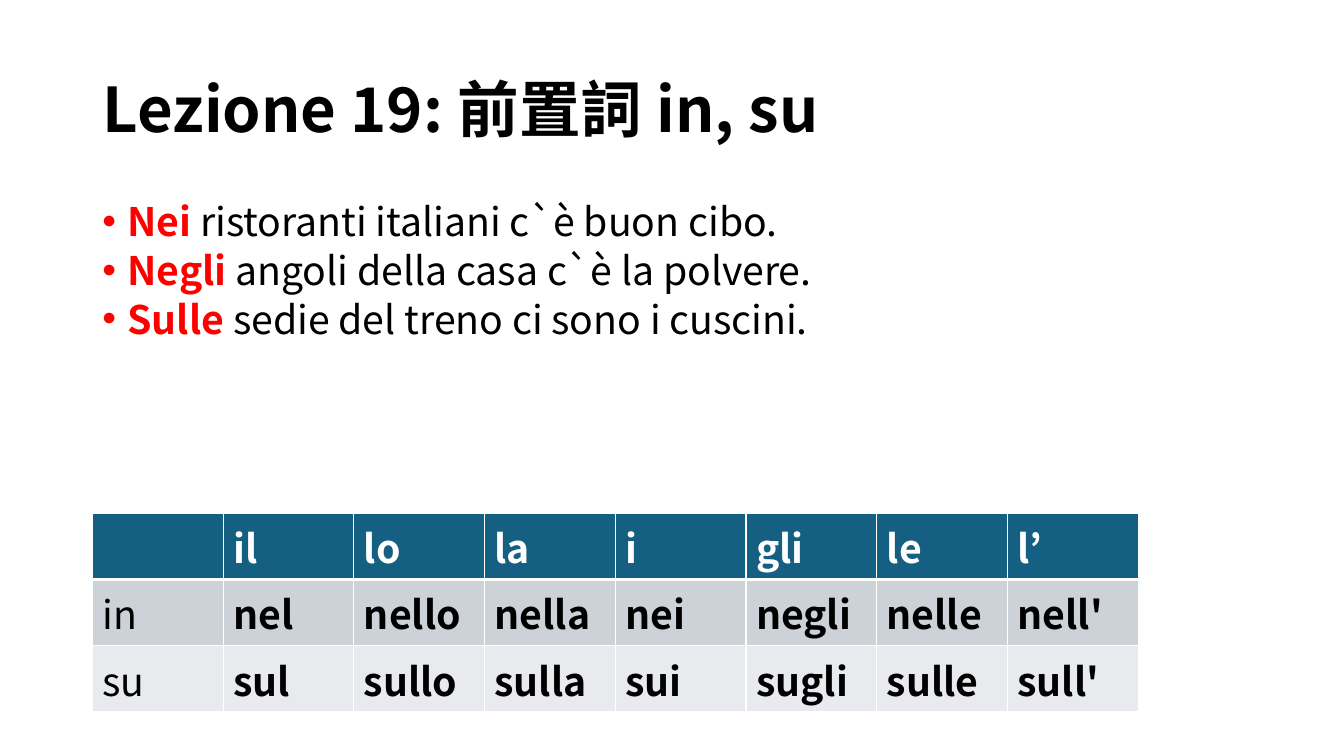
import lxml.etree
import pptx
import pptx.dml.color
import pptx.enum.text
import pptx.oxml.ns
import pptx.util

EMU_PER_PX = 9525
FONT = "Noto Sans CJK JP"
COLORS = {
    "ink": "000000",
    "accent": "FF0000",
    "white": "FFFFFF",
    "header": "156082",
    "in_row": "CCD2D8",
    "su_row": "E8EAED",
}
TITLE = "Lezione 19: 前置詞 in, su"
EXAMPLES = [
    ("Nei ", "ristoranti italiani c`è buon cibo."),
    ("Negli ", "angoli della casa c`è la polvere."),
    ("Sulle ", "sedie del treno ci sono i cuscini."),
]
CONTRACTIONS = [
    ["", "il", "lo", "la", "i", "gli", "le", "l’"],
    ["in", "nel", "nello", "nella", "nei", "negli", "nelle", "nell'"],
    ["su", "sul", "sullo", "sulla", "sui", "sugli", "sulle", "sull'"],
]


def px(length):
    return pptx.util.Emu(length * EMU_PER_PX)


def rgb(name):
    return pptx.dml.color.RGBColor.from_string(COLORS[name])


def add_xml(parent, tag, **attributes):
    return lxml.etree.SubElement(parent, pptx.oxml.ns.qn(tag), attributes)


def format_paragraph(paragraph, size, color=None, bold=None):
    """Set the font for Latin and East Asian letters alike."""
    font = paragraph.font
    font.size = pptx.util.Pt(size)
    font.name = FONT
    font.bold = bold
    if color:
        font.color.rgb = rgb(color)
    defaults = paragraph._p.pPr.find(pptx.oxml.ns.qn("a:defRPr"))
    add_xml(defaults, "a:ea", typeface=FONT)


def add_title(slide, left, top, width, height):
    title = slide.shapes.title
    title.left, title.top, title.width, title.height = map(px, (left, top, width, height))
    frame = title.text_frame
    frame.text = TITLE
    frame.word_wrap = True
    frame.vertical_anchor = pptx.enum.text.MSO_ANCHOR.MIDDLE
    heading = frame.paragraphs[0]
    heading.alignment = pptx.enum.text.PP_ALIGN.LEFT
    heading.line_spacing = 0.9
    format_paragraph(heading, 44, "ink", True)


def add_bullet(paragraph, indent):
    properties = paragraph._p.get_or_add_pPr()
    properties.set("marL", str(px(indent)))
    properties.set("indent", str(px(-indent)))
    bullet_color = add_xml(properties, "a:buClr")
    add_xml(bullet_color, "a:srgbClr", val=COLORS["accent"])
    add_xml(properties, "a:buFont", typeface="Arial")
    add_xml(properties, "a:buChar", char="•")


def add_examples(slide, left, top, width, height):
    frame = slide.shapes.add_textbox(*map(px, (left, top, width, height))).text_frame
    frame.word_wrap = True
    for index, (preposition, rest) in enumerate(EXAMPLES):
        sentence = frame.add_paragraph() if index else frame.paragraphs[0]
        add_bullet(sentence, 24)
        sentence.line_spacing = 0.8
        sentence.space_before = pptx.util.Pt(8 if index else 0)
        format_paragraph(sentence, 28)
        for words, color, bold in ((preposition, "accent", True), (rest, "ink", False)):
            run = sentence.add_run()
            run.text = words
            run.font.bold = bold
            run.font.color.rgb = rgb(color)


def add_borders(cell, top, bottom):
    """Draw white cell edges; top and bottom are widths in points."""
    properties = cell._tc.get_or_add_tcPr()
    for side, width in (("L", 1), ("R", 1), ("T", top), ("B", bottom)):
        edge = add_xml(properties, f"a:ln{side}", w=str(pptx.util.Pt(width)))
        add_xml(add_xml(edge, "a:solidFill"), "a:srgbClr", val=COLORS["white"])


def add_contractions(slide, left, top, width, height):
    row_count, column_count = len(CONTRACTIONS), len(CONTRACTIONS[0])
    table = slide.shapes.add_table(
        row_count, column_count, *map(px, (left, top, width, height))
    ).table
    for row, (words, fill) in enumerate(zip(CONTRACTIONS, ("header", "in_row", "su_row"))):
        for column, word in enumerate(words):
            cell = table.cell(row, column)
            add_borders(cell, 3 if row == 1 else 1, 3 if row == 0 else 1)
            cell.fill.solid()
            cell.fill.fore_color.rgb = rgb(fill)
            cell.text = word
            format_paragraph(
                cell.text_frame.paragraphs[0],
                28,
                "ink" if row else "white",
                row == 0 or column > 0,
            )


def main():
    presentation = pptx.Presentation()
    presentation.slide_width, presentation.slide_height = px(1280), px(720)
    slide = presentation.slides.add_slide(presentation.slide_layouts.get_by_name("Title Only"))
    add_title(slide, 88, 38, 1104, 139)
    add_examples(slide, 88, 192, 1104, 457)
    add_contractions(slide, 88, 489, 996, 189)
    presentation.save("out.pptx")


if __name__ == "__main__":
    main()
